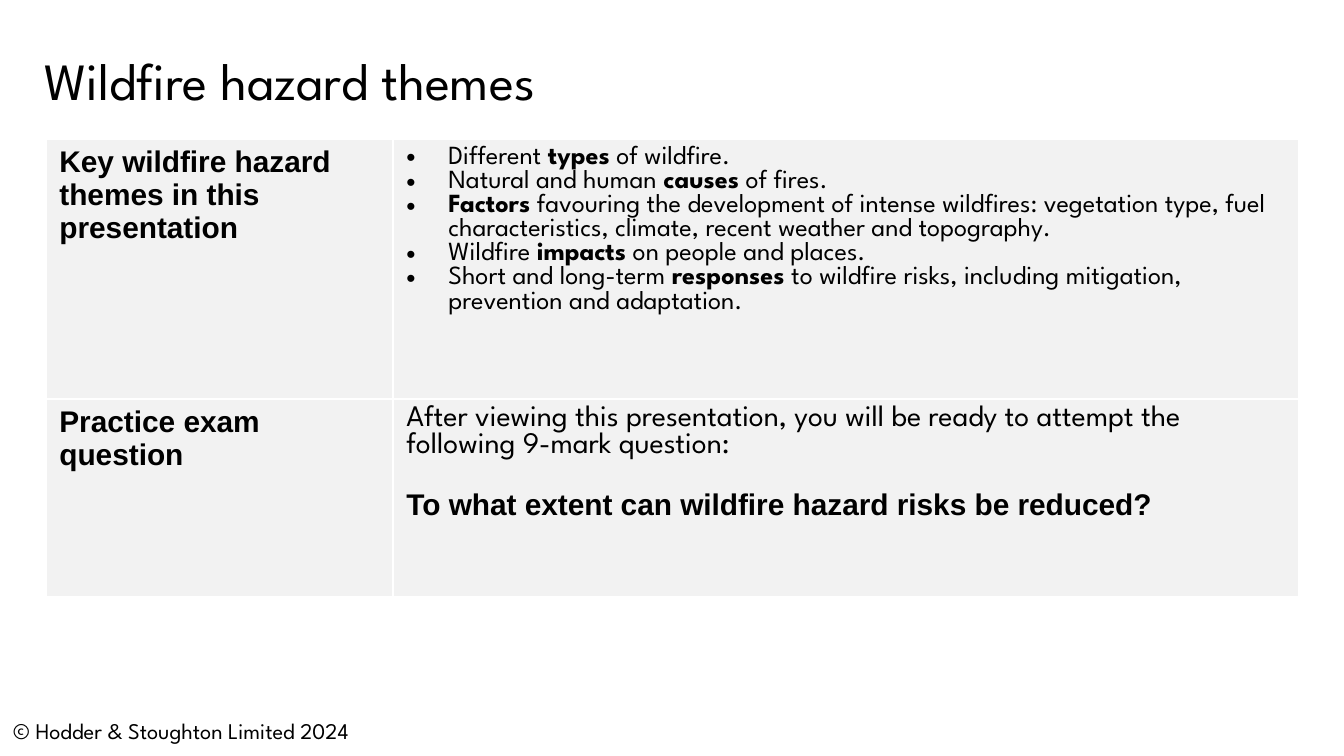
from lxml.etree import SubElement as Sub
from pptx import Presentation as Deck
from pptx.dml.color import RGBColor as Rgb
from pptx.enum.text import MSO_ANCHOR as Anchor, MSO_AUTO_SIZE as Fit, PP_ALIGN as Align
from pptx.oxml.ns import qn
from pptx.util import Emu, Pt

HUES = {"ink": "000000", "cell": "F2F2F2", "rule": "FFFFFF"}
SPARTAN = "League Spartan"
ARIAL = "Arial"
THEMES = [
    "Different *types* of wildfire.",
    "Natural and human *causes* of fires.",
    "*Factors* favouring the development of intense wildfires: vegetation type, "
    "fuel characteristics, climate, recent weather and topography.",
    "Wildfire *impacts* on people and places.",
    "Short and long-term *responses* to wildfire risks, including mitigation, "
    "prevention and adaptation.",
]


def px(num):
    """Turn pixels into EMU."""
    return Emu(round(num * 914400 / 134.4))


def place(shape, box):
    """Move a shape to a box of left, top, width and height."""
    shape.left, shape.top, shape.width, shape.height = map(px, box)


def write(frame, text, size, font=SPARTAN, bold=False, dot=False, gap=0, first=True):
    """Write one paragraph, with starred words in bold."""
    para = frame.paragraphs[0] if first else frame.add_paragraph()
    para.alignment = Align.LEFT
    if dot:
        props = para._p.get_or_add_pPr()
        props.set("marL", str(px(42)))
        props.set("indent", str(px(-42)))
        tint = Sub(props, qn("a:buClr"))
        Sub(tint, qn("a:srgbClr"), val=HUES["ink"])
        Sub(props, qn("a:buFont"), typeface=ARIAL)
        Sub(props, qn("a:buChar"), char="•")
    if gap:
        para.space_before = Pt(gap)
    for spot, part in enumerate(text.split("*")):
        if part:
            run = para.add_run()
            run.text = part
            run.font.name = font
            run.font.size = Pt(size)
            run.font.bold = bold or spot % 2 == 1
            run.font.color.rgb = Rgb.from_string(HUES["ink"])


def dress(cell):
    """Fill a cell and rule its four sides."""
    props = cell._tc.get_or_add_tcPr()
    for side in ("lnL", "lnR", "lnT", "lnB"):
        line = Sub(props, qn(f"a:{side}"), w=str(Pt(1)))
        fill = Sub(line, qn("a:solidFill"))
        Sub(fill, qn("a:srgbClr"), val=HUES["rule"])
    cell.fill.solid()
    cell.fill.fore_color.rgb = Rgb.from_string(HUES["cell"])


def add_title(slide, box):
    """Fill the title placeholder."""
    title = slide.shapes.title
    place(title, box)
    frame = title.text_frame
    frame.auto_size = Fit.NONE
    frame.vertical_anchor = Anchor.TOP
    frame.margin_left = frame.margin_right = frame.margin_bottom = px(13)
    frame.margin_top = px(31)
    write(frame, "Wildfire hazard themes", 28)


def add_grid(slide, box):
    """Add the table of themes and the exam question."""
    left, top, wide, high = box
    grid = slide.shapes.add_table(2, 2, *map(px, box)).table
    grid.first_row = grid.horz_banding = False
    for col, size in zip(grid.columns, (347, wide - 347)):
        col.width = px(size)
    for row, size in zip(grid.rows, (260, high - 260)):
        row.height = px(size)
    for cell in grid.iter_cells():
        dress(cell)
    heads = ("Key wildfire hazard themes in this presentation", "Practice exam question")
    for row, head in enumerate(heads):
        write(grid.cell(row, 0).text_frame, head, 16, font=ARIAL, bold=True)
    list_frame = grid.cell(0, 1).text_frame
    for spot, theme in enumerate(THEMES):
        write(list_frame, theme, 14, dot=True, first=spot == 0)
    task = grid.cell(1, 1).text_frame
    write(task, "After viewing this presentation, you will be ready to attempt "
          "the following 9-mark question:", 16)
    write(task, "To what extent can wildfire hazard risks be reduced?", 16,
          font=ARIAL, bold=True, gap=15, first=False)


def add_foot(slide, box):
    """Add the copyright line."""
    frame = slide.shapes.add_textbox(*map(px, box)).text_frame
    frame.word_wrap = True
    frame.vertical_anchor = Anchor.MIDDLE
    write(frame, "© Hodder & Stoughton Limited 2024", 12)


def main():
    """Build the slide and save it."""
    deck = Deck()
    deck.slide_width, deck.slide_height = px(1344), px(756)
    slide = deck.slides.add_slide(deck.slide_layouts[5])
    add_title(slide, (31, 17, 840, 131))
    add_grid(slide, (46, 139, 1253, 458))
    add_foot(slide, (0, 711, 478, 40))
    deck.save("out.pptx")


if __name__ == "__main__":
    main()
